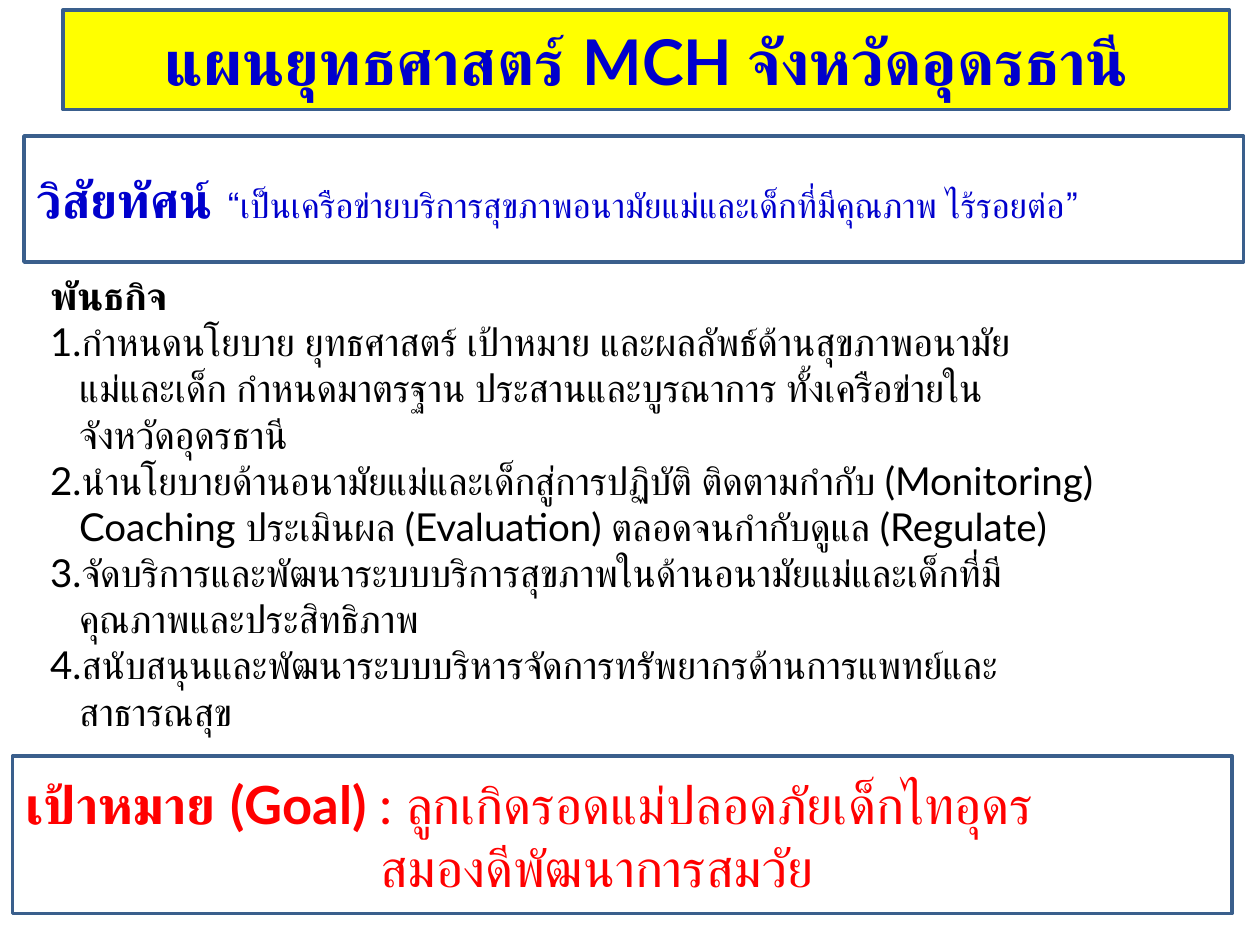
from dataclasses import dataclass

from pptx import Presentation
from pptx.dml.color import RGBColor
from pptx.enum.shapes import MSO_SHAPE
from pptx.enum.text import MSO_ANCHOR, PP_ALIGN
from pptx.slide import Slide
from pptx.text.text import TextFrame
from pptx.util import Inches, Pt

FONT = "Lato"
COLORS = {
    "border": "3A5F8C",
    "title_fill": "FFFF00",
    "blue": "0000CC",
    "red": "FF0000",
    "black": "000000",
}


@dataclass(frozen=True)
class Span:
    text: str
    size: int
    bold: bool = False


@dataclass(frozen=True)
class Line:
    spans: tuple[Span, ...]
    indent: float = 0


@dataclass(frozen=True)
class Panel:
    left: float
    top: float
    width: float
    height: float
    color: str
    lines: tuple[Line, ...]
    align: PP_ALIGN = PP_ALIGN.LEFT
    fill: str | None = None


MISSIONS = (
    (
        "1.กำหนดนโยบาย ยุทธศาสตร์ เป้าหมาย และผลลัพธ์ด้านสุขภาพอนามัย",
        "แม่และเด็ก กำหนดมาตรฐาน ประสานและบูรณาการ ทั้งเครือข่ายใน",
        "จังหวัดอุดรธานี",
    ),
    (
        "2.นำนโยบายด้านอนามัยแม่และเด็กสู่การปฏิบัติ ติดตามกำกับ (Monitoring)",
        "Coaching ประเมินผล (Evaluation) ตลอดจนกำกับดูแล (Regulate)",
    ),
    (
        "3.จัดบริการและพัฒนาระบบบริการสุขภาพในด้านอนามัยแม่และเด็กที่มี",
        "คุณภาพและประสิทธิภาพ",
    ),
    (
        "4.สนับสนุนและพัฒนาระบบบริหารจัดการทรัพยากรด้านการแพทย์และ",
        "สาธารณสุข",
    ),
)
MISSION_LINES = (Line((Span("พันธกิจ", 22, True),)),) + tuple(
    Line((Span(text, 22),), 0.23 if position else 0)
    for mission in MISSIONS
    for position, text in enumerate(mission)
)
MISSION = Panel(0.3, 2.11, 9.46, 3.8, "black", MISSION_LINES)

VISION = Panel(0.19, 1.08, 9.68, 1, "blue", (
    Line((
        Span("วิสัยทัศน์ ", 28, True),
        Span("“เป็นเครือข่ายบริการสุขภาพอนามัยแม่และเด็กที่มีคุณภาพ ไร้รอยต่อ”", 20),
    )),
))
GOAL = Panel(0.1, 6, 9.68, 1.25, "red", (
    Line((
        Span("เป้าหมาย (Goal) ", 30, True),
        Span(": ลูกเกิดรอดแม่ปลอดภัยเด็กไทอุดร", 30),
    )),
    Line((Span("สมองดีพัฒนาการสมวัย", 30),), 2.82),
))
TITLE = Panel(0.5, 0.08, 9.26, 0.79, "blue", (
    Line((Span("แผนยุทธศาสตร์ MCH จังหวัดอุดรธานี", 36, True),)),
), PP_ALIGN.CENTER, "title_fill")


def rgb(name: str) -> RGBColor:
    """Return the named colour."""
    return RGBColor.from_string(COLORS[name])


def write_lines(frame: TextFrame, panel: Panel) -> None:
    """Fill a text frame with the lines of a panel."""
    frame.word_wrap = True
    for position, line in enumerate(panel.lines):
        para = frame.add_paragraph() if position else frame.paragraphs[0]
        para.alignment = panel.align
        if line.indent:
            para._p.get_or_add_pPr().set("marL", str(Inches(line.indent)))
        for span in line.spans:
            run = para.add_run()
            run.text = span.text
            run.font.name = FONT
            run.font.size = Pt(span.size)
            run.font.bold = span.bold
            run.font.color.rgb = rgb(panel.color)


def add_text(page: Slide, panel: Panel) -> None:
    """Add a panel as a plain text box."""
    box = page.shapes.add_textbox(
        Inches(panel.left), Inches(panel.top), Inches(panel.width), Inches(panel.height)
    )
    write_lines(box.text_frame, panel)


def add_framed(page: Slide, panel: Panel) -> None:
    """Add a panel as a bordered rectangle."""
    box = page.shapes.add_shape(
        MSO_SHAPE.RECTANGLE,
        Inches(panel.left), Inches(panel.top), Inches(panel.width), Inches(panel.height),
    )
    box.shadow.inherit = False
    if panel.fill:
        box.fill.solid()
        box.fill.fore_color.rgb = rgb(panel.fill)
    else:
        box.fill.background()
    box.line.color.rgb = rgb("border")
    box.line.width = Pt(2)
    box.text_frame.vertical_anchor = MSO_ANCHOR.MIDDLE
    write_lines(box.text_frame, panel)


def main() -> None:
    """Build the strategy slide."""
    deck = Presentation()
    deck.slide_width = Inches(10)
    deck.slide_height = Inches(7.5)
    page = deck.slides.add_slide(deck.slide_layouts[6])
    add_text(page, MISSION)
    for panel in (VISION, GOAL, TITLE):
        add_framed(page, panel)
    deck.save("out.pptx")


if __name__ == "__main__":
    main()
